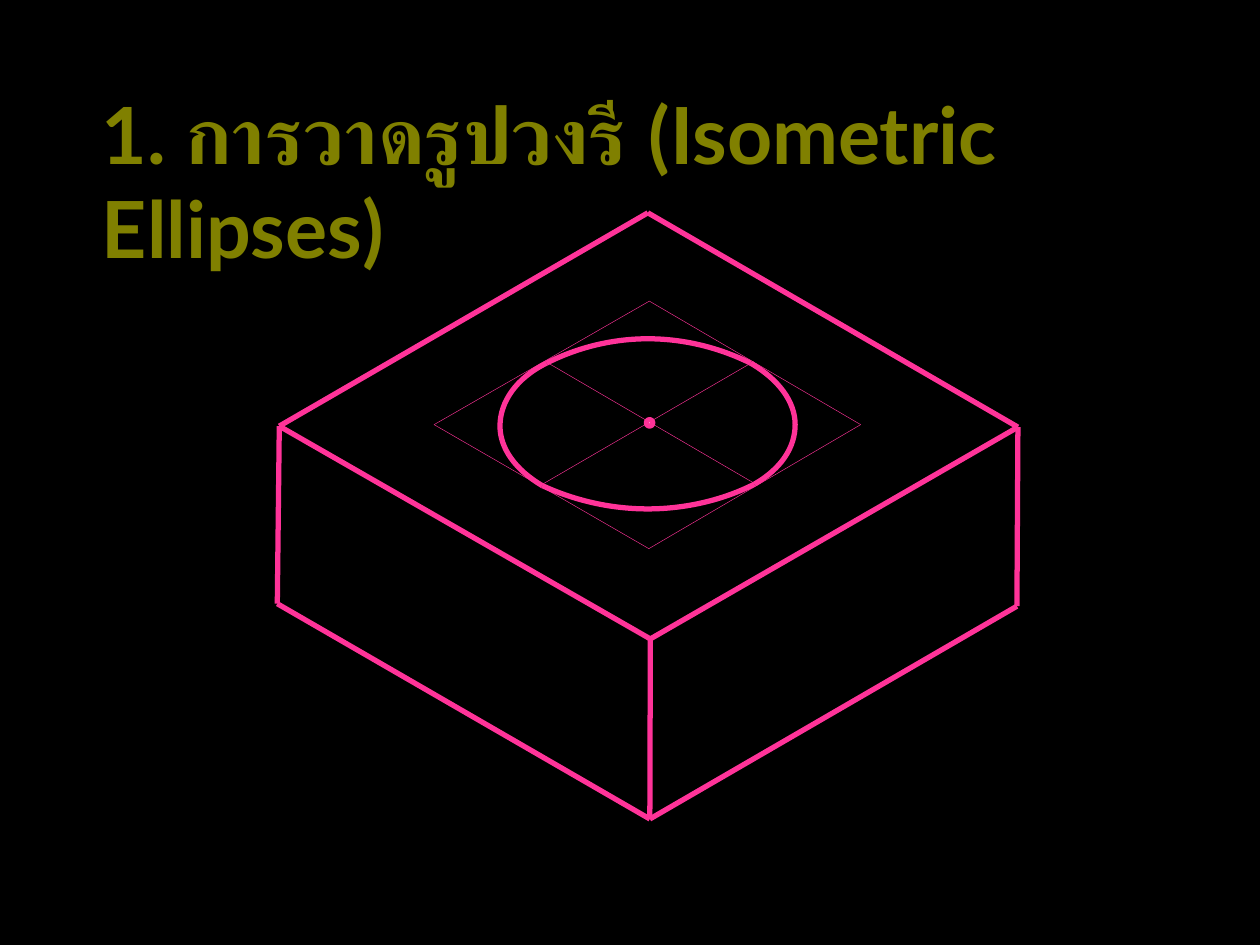
from dataclasses import dataclass
from itertools import pairwise

from lxml.etree import SubElement
from pptx import Presentation
from pptx.dml.color import RGBColor as Rgb
from pptx.enum.shapes import MSO_CONNECTOR as Connector, MSO_SHAPE as Shape
from pptx.enum.text import MSO_ANCHOR as Anchor, MSO_AUTO_SIZE as AutoSize, PP_ALIGN as Align
from pptx.oxml.ns import qn
from pptx.util import Cm, Pt


@dataclass(frozen=True)
class Theme:
    background: Rgb = Rgb(0x00, 0x00, 0x00)
    heading: Rgb = Rgb(0x80, 0x80, 0x00)
    ink: Rgb = Rgb(0xFF, 0x33, 0x99)
    dot: Rgb = Rgb(0xFF, 0xFF, 0xFF)
    font: str = "Lato"
    heading_size: float = 45
    outline: float = 3
    guide: float = 0.25


class Drawing:
    """Holds the theme and the current slide."""

    def __init__(self, slide, theme):
        self.slide, self.theme = slide, theme
        slide.background.fill.solid()
        slide.background.fill.fore_color.rgb = theme.background

    def title(self, text, left, top, width, height):
        heading = self.slide.shapes.title
        heading.left, heading.top = Cm(left), Cm(top)
        heading.width, heading.height = Cm(width), Cm(height)
        frame = heading.text_frame
        frame.text = text
        frame.word_wrap = True
        frame.auto_size = AutoSize.NONE
        frame.vertical_anchor = Anchor.TOP
        paragraph = frame.paragraphs[0]
        paragraph.alignment = Align.LEFT
        font = paragraph.runs[0].font
        font.name, font.size, font.bold = self.theme.font, Pt(self.theme.heading_size), True
        font.color.rgb = self.theme.heading

    def stroke(self, line, weight):
        line.color.rgb = self.theme.ink
        line.width = Pt(weight)

    def edges(self, corners, weight):
        """Join each corner to the next with a straight line."""
        for start, end in pairwise(corners):
            edge = self.slide.shapes.add_connector(
                Connector.STRAIGHT, *(Cm(value) for value in start + end))
            self.stroke(edge.line, weight)
            SubElement(edge._element.spPr, qn("a:effectLst"))

    def dot(self, left, top, size):
        dot = self.slide.shapes.add_shape(Shape.OVAL, Cm(left), Cm(top), Cm(size), Cm(size))
        dot.shadow.inherit = False
        dot.fill.solid()
        dot.fill.fore_color.rgb = self.theme.dot
        self.stroke(dot.line, self.theme.outline)

    def arc(self, start, *points):
        """Draw an open curve; every three points make one cubic segment."""
        builder = self.slide.shapes.build_freeform(Cm(start[0]), Cm(start[1]))
        builder.add_line_segments([(Cm(x), Cm(y)) for x, y in points], close=False)
        arc = builder.convert_to_shape()
        arc.shadow.inherit = False
        arc.fill.background()
        self.stroke(arc.line, self.theme.outline)
        # Turn the straight segments into cubic ones
        path = next(arc._element.iter(qn("a:path")))
        segments = path.findall(qn("a:lnTo"))
        for first in range(0, len(segments), 3):
            curve = SubElement(path, qn("a:cubicBezTo"))
            for segment in segments[first:first + 3]:
                curve.append(segment[0])
                path.remove(segment)


def main():
    deck = Presentation()
    deck.slide_width, deck.slide_height = Cm(25.4), Cm(19.05)
    theme = Theme()
    drawing = Drawing(deck.slides.add_slide(deck.slide_layouts[5]), theme)

    # Block: top face, then the two visible sides
    back, left, right, front = (13.06, 4.29), (5.63, 8.59), (20.52, 8.61), (13.11, 12.88)
    left_base, right_base, front_base = (5.59, 12.17), (20.5, 12.22), (13.1, 16.51)
    drawing.edges([left_base, front_base, right_base, right, back, left, left_base], theme.outline)
    drawing.edges([left, front, right], theme.outline)
    drawing.edges([front, front_base], theme.outline)

    # Guide rhombus and its centre lines
    rhombus = [(13.09, 6.07), (8.75, 8.56), (13.08, 11.06), (17.35, 8.56)]
    drawing.edges(rhombus + rhombus[:1], theme.guide)
    drawing.edges([(11, 7.29), (15.27, 9.78)], theme.guide)
    drawing.edges([(15.19, 7.29), (10.87, 9.8)], theme.guide)
    drawing.dot(13.03, 8.46, 0.13)

    # Isometric ellipse made of four arcs
    top_left, top_right = (11.02, 7.32), (15.13, 7.32)
    low_right, low_left = (15.21, 9.76), (10.93, 9.79)
    drawing.arc(top_left, (11.63, 7.01), (12.34, 6.83), (13.06, 6.83),
                (13.79, 6.83), (14.5, 7.01), top_right)
    drawing.arc(low_right, (14.58, 10.08), (13.82, 10.26), (13.06, 10.26),
                (12.29, 10.26), (11.56, 10.08), low_left)
    drawing.arc(top_right, (15.7, 7.65), (16.03, 8.1), (16.03, 8.56),
                (16.03, 9.02), (15.75, 9.45), low_right)
    drawing.arc(low_left, (10.39, 9.47), (10.08, 9.04), (10.08, 8.59),
                (10.08, 8.1), (10.41, 7.62), top_left)

    drawing.title("1. การวาดรูปวงรี (Isometric Ellipses)", 1.8, 1.6, 19.41, 2.16)
    deck.save("out.pptx")


if __name__ == "__main__":
    main()
